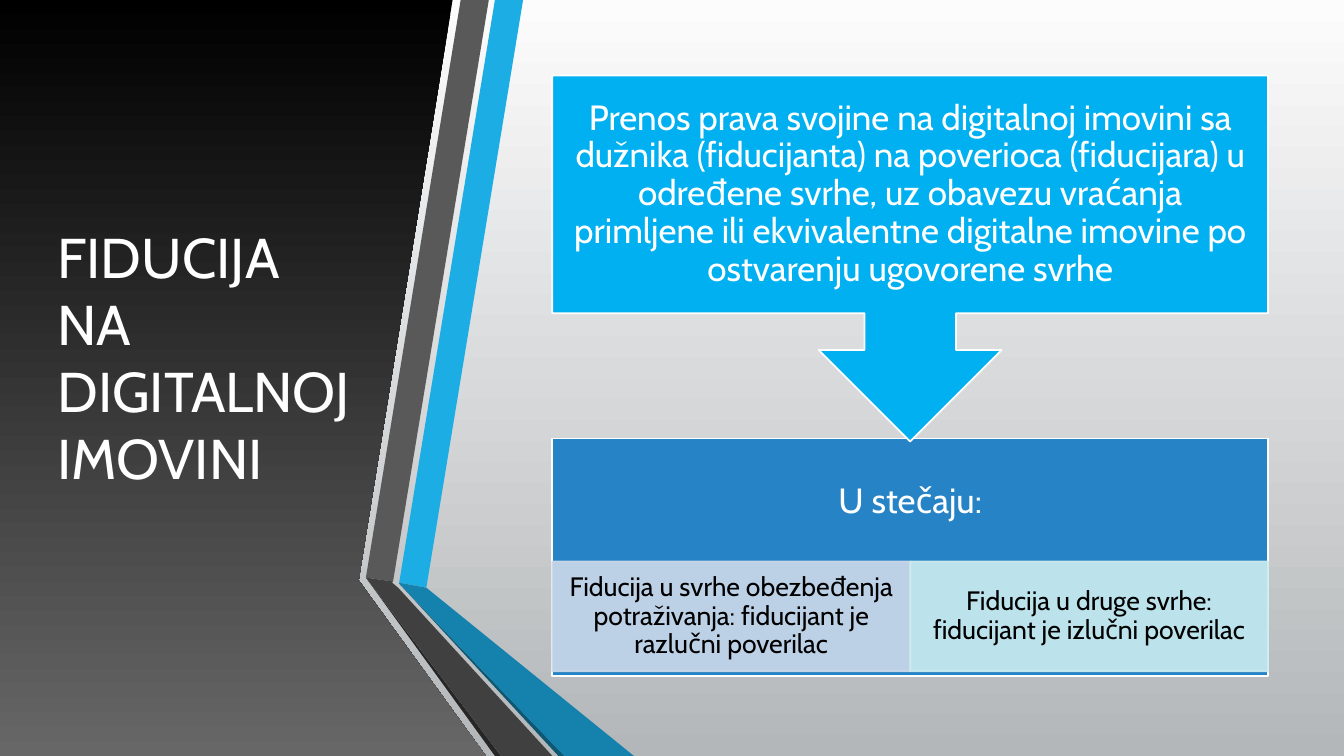
from dataclasses import dataclass

from lxml.etree import SubElement
from pptx import Presentation
from pptx.dml.color import RGBColor
from pptx.enum.shapes import MSO_SHAPE
from pptx.enum.text import MSO_ANCHOR, MSO_AUTO_SIZE, PP_ALIGN
from pptx.oxml.ns import qn
from pptx.util import Pt


@dataclass(frozen=True)
class Theme:
    """Colours, font and type sizes of the slide."""
    font: str = "Cabin"
    title_size: int = 40
    statement_size: int = 25
    detail_size: int = 19
    white: str = "FFFFFF"
    black: str = "000000"
    backdrop: tuple = ("FCFCFC", "B4B7B9")
    panel: tuple = ("000000", "676767")
    callout: str = "00B0F0"
    bankruptcy: str = "2683C6"
    security: str = "CDD9EA"
    other: str = "CDEDF0"
    outline: float = 1.25


THEME = Theme()
WIDTH, HEIGHT = 960, 540

RIBBONS = [
    ("1CADE4", [(23.8, 416.2), (43.2, 419.8), (112.3, 0), (92.2, 0)]),
    ("595959", [(87.8, 0), (67.7, 0), (0, 412.6), (19.4, 415.4)]),
    ("262626", [(0, 412.6), (92.2, 540), (96.5, 540)]),
    ("0E5772", [(23.8, 416.9), (137.5, 540), (141.8, 540)]),
    ("1482AC", [(23.8, 416.9), (141.8, 540), (191.5, 540), (43.2, 419.8), (23.8, 416.2)]),
    ("404040", [(133.2, 540), (23, 419.8), (18.7, 416.2), (19.4, 415.4), (0, 412.6), (96.5, 540)]),
]
PANEL_OUTLINE = [(0, 0), (323.3, 0), (256.3, 414), (256.3, 414.7), (347, 540), (0, 540)]


def paint_gradient(fill, colours):
    """Fill from top to bottom with two colours."""
    fill.gradient()
    fill.gradient_angle = 270
    for stop, colour in zip(fill.gradient_stops, colours):
        stop.color.rgb = RGBColor.from_string(colour)


def paint_solid(fill, colour, opacity=100):
    """Fill with one colour at the given opacity in percent."""
    fill.solid()
    fill.fore_color.rgb = RGBColor.from_string(colour)
    if opacity < 100:
        for element in fill._xPr.find(qn("a:solidFill")):
            SubElement(element, qn("a:alpha")).set("val", str(opacity * 1000))


def write_text(shape, text, size, colour, align=PP_ALIGN.CENTER, spacing=0.9,
               insets=(7.2, 3.6, 7.2, 3.6)):
    """Write one vertically centred paragraph with the given format."""
    frame = shape.text_frame
    frame.word_wrap = True
    frame.auto_size = MSO_AUTO_SIZE.NONE
    frame.vertical_anchor = MSO_ANCHOR.MIDDLE
    frame.margin_left, frame.margin_top, frame.margin_right, frame.margin_bottom = map(Pt, insets)
    paragraph = frame.paragraphs[0]
    paragraph.alignment = align
    paragraph.line_spacing = spacing
    run = paragraph.add_run()
    run.text = text
    run.font.name = THEME.font
    run.font.size = Pt(size)
    run.font.color.rgb = RGBColor.from_string(colour)


def add_outline(slide, points, left, top):
    """Add a closed borderless polygon offset by left and top."""
    vertices = [(Pt(left + x), Pt(top + y)) for x, y in points]
    builder = slide.shapes.build_freeform(*vertices[0], scale=1.0)
    builder.add_line_segments(vertices[1:], close=True)
    shape = builder.convert_to_shape()
    shape.shadow.inherit = False
    shape.line.fill.background()
    return shape


def add_block(slide, kind, box, colour, line_colour, opacity=100):
    """Add a filled and outlined preset shape."""
    shape = slide.shapes.add_shape(kind, *map(Pt, box))
    shape.shadow.inherit = False
    paint_solid(shape.fill, colour, opacity)
    shape.line.width = Pt(THEME.outline)
    paint_solid(shape.line.fill, line_colour, opacity)
    return shape


def add_title_panel(slide, left, top, height):
    """Draw the dark panel and put the title on it."""
    panel = add_outline(slide, PANEL_OUTLINE, left, top)
    paint_gradient(panel.fill, THEME.panel)
    title = slide.shapes.title
    title.left, title.top = Pt(left + 33.84), Pt(top + 54)
    title.width, title.height = Pt(231.12), Pt(height - 138.24)
    write_text(title, "FIDUCIJA NA DIGITALNOJ IMOVINI", THEME.title_size, THEME.white,
               align=PP_ALIGN.LEFT, spacing=1.0)
    panel._element.addnext(title._element)


def add_ribbons(slide, left, top):
    """Draw the folded ribbons along the panel edge."""
    for colour, points in RIBBONS:
        paint_solid(add_outline(slide, points, left, top).fill, colour)


def add_bankruptcy(slide, left, top, width, height):
    """Draw the lower block with its two cases side by side."""
    cell_top, cell_height, inset = 87.84, 78.48, 13.68
    block = add_block(slide, MSO_SHAPE.RECTANGLE, (left, top, width, height),
                      THEME.bankruptcy, THEME.white)
    write_text(block, "U stečaju:", THEME.statement_size, THEME.white,
               insets=(inset, inset, inset, inset + cell_height))
    cases = [
        ("Fiducija u svrhe obezbeđenja potraživanja: fiducijant je razlučni poverilac",
         THEME.security),
        ("Fiducija u druge svrhe: fiducijant je izlučni poverilac", THEME.other),
    ]
    cell_width = width / len(cases)
    for index, (text, colour) in enumerate(cases):
        box = (left + index * cell_width, top + cell_top, cell_width, cell_height)
        cell = add_block(slide, MSO_SHAPE.RECTANGLE, box, colour, colour, opacity=90)
        write_text(cell, text, THEME.detail_size, THEME.black, insets=(10.8, 2.16, 10.8, 2.16))


def add_definition(slide, left, top, width, height):
    """Draw the definition callout that points down."""
    callout = add_block(slide, MSO_SHAPE.DOWN_ARROW_CALLOUT, (left, top, width, height),
                        THEME.callout, THEME.white)
    write_text(callout,
               "Prenos prava svojine na digitalnoj imovini sa dužnika (fiducijanta) na "
               "poverioca (fiducijara) u određene svrhe, uz obavezu vraćanja primljene ili "
               "ekvivalentne digitalne imovine po ostvarenju ugovorene svrhe",
               THEME.statement_size, THEME.white, insets=(13.68,) * 4)


def main():
    """Build and save the presentation."""
    presentation = Presentation()
    presentation.slide_width, presentation.slide_height = Pt(WIDTH), Pt(HEIGHT)
    slide = presentation.slides.add_slide(presentation.slide_layouts[5])
    paint_gradient(slide.background.fill, THEME.backdrop)
    add_title_panel(slide, 0, 0, HEIGHT)
    add_ribbons(slide, 261.36, 0)
    add_bankruptcy(slide, 394.56, 313.2, 511.2, 169.92)
    add_definition(slide, 394.56, 54, 511.2, 261.36)
    presentation.save("out.pptx")


if __name__ == "__main__":
    main()
